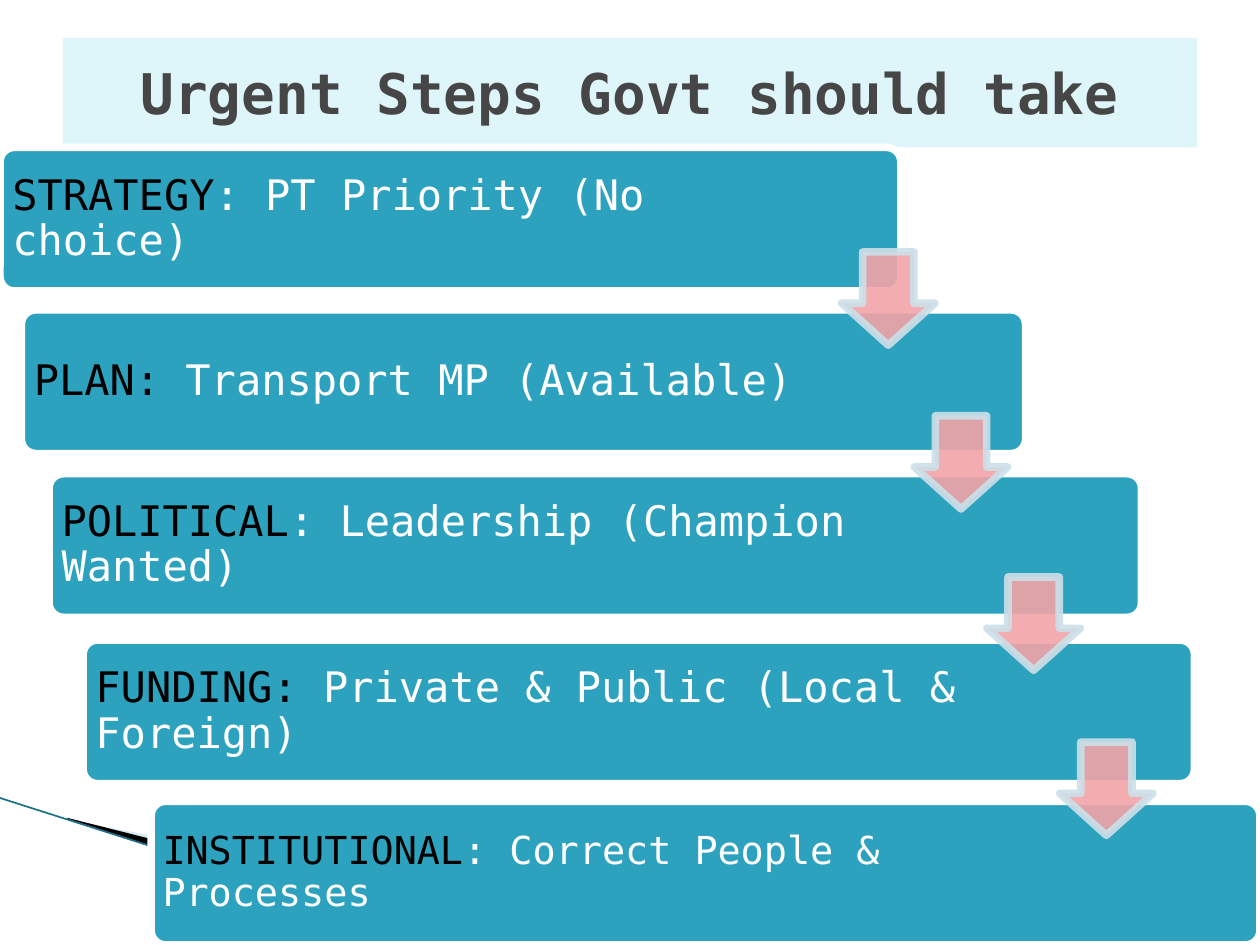
from lxml.etree import SubElement
from pptx import Presentation
from pptx.dml.color import RGBColor
from pptx.enum.shapes import MSO_CONNECTOR, MSO_SHAPE
from pptx.enum.text import MSO_ANCHOR, PP_ALIGN
from pptx.oxml.ns import qn
from pptx.util import Inches, Pt

FONT = "DejaVu Sans Mono"
WHITE = RGBColor(0xFF, 0xFF, 0xFF)
BLACK = RGBColor(0, 0, 0)
GREY = RGBColor(0x46, 0x46, 0x46)
PALE = RGBColor(0xDE, 0xF5, 0xFA)
TEAL = RGBColor(0x2D, 0xA2, 0xBF)
DARK_TEAL = RGBColor(0x1B, 0x70, 0x88)
MIST = RGBColor(0xA0, 0xCB, 0xDC)
PINK = RGBColor(0xF2, 0xA4, 0xA7)
ARROW_EDGE = RGBColor(0xCD, 0xE0, 0xE8)

STEP_HEIGHT = 1.14
TEXT_SHARE = 0.83
OUTLINE = 4.33
ARROW_SIZE = 0.74

# Left, top, width, heading, detail, text size
STEPS = [
    (0, 1.17, 7.15, "STRATEGY", ": PT Priority (No choice)", 24),
    (0.17, 2.46, 7.97, "PLAN: ", "Transport MP (Available)", 24),
    (0.39, 3.76, 8.67, "POLITICAL", ": Leadership (Champion Wanted)", 24),
    (0.66, 5.08, 8.82, "FUNDING: ", "Private & Public (Local & Foreign)", 24),
    (1.2, 6.36, 8.8, "INSTITUTIONAL", ": Correct People & Processes", 22),
]
ARROW_TOPS = [2, 3.3, 4.58, 5.89]


def set_opacity(fill, percent):
    color = fill._xPr.find(qn("a:solidFill"))[0]
    SubElement(color, qn("a:alpha"), val=str(percent * 1000))


def style_shape(shape, fill, line=None, opacity=100):
    shape.shadow.inherit = False
    shape.fill.solid()
    shape.fill.fore_color.rgb = fill
    if line is None:
        shape.line.fill.background()
    else:
        shape.line.color.rgb = line
        shape.line.width = Pt(OUTLINE)
    if opacity < 100:
        set_opacity(shape.fill, opacity)
        if line is not None:
            set_opacity(shape.line.fill, opacity)


def add_run(paragraph, text, size=24, color=WHITE, bold=False):
    run = paragraph.add_run()
    run.text = text
    run.font.name = FONT
    run.font.size = Pt(size)
    run.font.bold = bold
    run.font.color.rgb = color


def add_wedge(slide, points, fill, opacity=100):
    corners = [(Inches(x), Inches(y)) for x, y in points]
    builder = slide.shapes.build_freeform(*corners[0])
    builder.add_line_segments(corners[1:], close=True)
    style_shape(builder.convert_to_shape(), fill, opacity=opacity)


def add_corner_decoration(slide):
    add_wedge(slide, [(0.55, 6.51), (5.95, 7.51), (4.56, 7.51), (0.55, 6.5)],
              MIST, opacity=40)
    add_wedge(slide, [(0.53, 6.49), (4.57, 7.51), (3.72, 7.52), (0.54, 6.5)],
              BLACK)
    line = slide.shapes.add_connector(
        MSO_CONNECTOR.STRAIGHT,
        Inches(-0.01), Inches(6.33), Inches(3.71), Inches(7.52))
    line.line.color.rgb = DARK_TEAL
    line.line.width = Pt(0.95)
    SubElement(line._element.spPr, qn("a:effectLst"))


def format_title(slide, text):
    title = slide.shapes.title
    title.left, title.top = Inches(0.5), Inches(0.3)
    title.width, title.height = Inches(9), Inches(0.87)
    title.fill.solid()
    title.fill.fore_color.rgb = PALE
    title.text_frame.vertical_anchor = MSO_ANCHOR.MIDDLE
    paragraph = title.text_frame.paragraphs[0]
    paragraph.alignment = PP_ALIGN.CENTER
    add_run(paragraph, text, size=32, color=GREY, bold=True)


def add_step(slide, left, top, width, heading, detail, size):
    bar = slide.shapes.add_shape(
        MSO_SHAPE.ROUNDED_RECTANGLE,
        Inches(left), Inches(top), Inches(width), Inches(STEP_HEIGHT))
    bar.adjustments[0] = 0.1
    style_shape(bar, TEAL, line=WHITE)

    # The label stays clear of the arrow at the bar's right end
    label = slide.shapes.add_textbox(
        Inches(left), Inches(top),
        Inches(width * TEXT_SHARE), Inches(STEP_HEIGHT))
    frame = label.text_frame
    frame.word_wrap = True
    frame.vertical_anchor = MSO_ANCHOR.MIDDLE
    inset = Inches(0.1 if size == 24 else 0.09)
    frame.margin_left = frame.margin_right = inset
    frame.margin_top = frame.margin_bottom = inset
    paragraph = frame.paragraphs[0]
    paragraph.line_spacing = 0.9
    add_run(paragraph, heading, size=size, color=BLACK)
    add_run(paragraph, detail, size=size)


def add_arrow(slide, left, top):
    arrow = slide.shapes.add_shape(
        MSO_SHAPE.DOWN_ARROW, Inches(left), Inches(top),
        Inches(ARROW_SIZE), Inches(ARROW_SIZE))
    # Head length first, then shaft width
    arrow.adjustments[0] = 0.55
    arrow.adjustments[1] = 0.45
    style_shape(arrow, PINK, line=ARROW_EDGE, opacity=90)


def main():
    presentation = Presentation()
    presentation.slide_width = Inches(10)
    presentation.slide_height = Inches(7.5)
    slide = presentation.slides.add_slide(presentation.slide_layouts[5])

    add_corner_decoration(slide)
    format_title(slide, "Urgent Steps Govt should take")
    for step in STEPS:
        add_step(slide, *step)
    for index, top in enumerate(ARROW_TOPS):
        add_arrow(slide, 6.68 + 0.577 * index, top)

    presentation.save("out.pptx")


if __name__ == "__main__":
    main()
